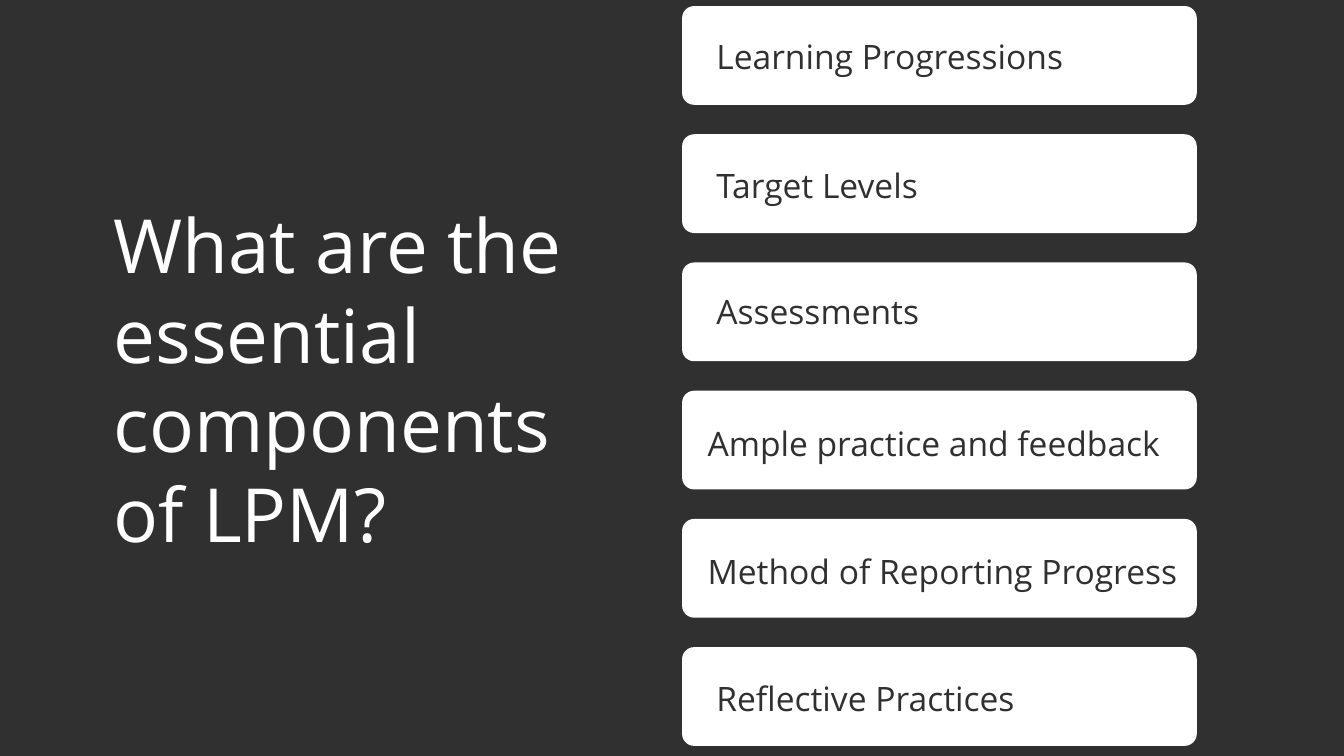
from dataclasses import dataclass

from pptx import Presentation
from pptx.dml.color import RGBColor
from pptx.enum.shapes import MSO_SHAPE
from pptx.enum.text import MSO_ANCHOR, PP_ALIGN
from pptx.util import Inches, Pt


@dataclass(frozen=True)
class Theme:
    dark: RGBColor = RGBColor(0x30, 0x30, 0x30)
    light: RGBColor = RGBColor(0xFF, 0xFF, 0xFF)
    font: str = "Open Sans"
    title_size: float = 80
    title_spacing: float = 96
    label_size: float = 36
    label_spacing: float = 46.8


class SlideBuilder:
    def __init__(self, slide, theme):
        self.slide = slide
        self.theme = theme

    def background(self):
        fill = self.slide.background.fill
        fill.solid()
        fill.fore_color.rgb = self.theme.dark

    def card(self, left, top, width, height, radius):
        shape = self.slide.shapes.add_shape(
            MSO_SHAPE.ROUNDED_RECTANGLE,
            Inches(left), Inches(top), Inches(width), Inches(height))
        shape.adjustments[0] = radius / height
        shape.shadow.inherit = False
        shape.fill.solid()
        shape.fill.fore_color.rgb = self.theme.light
        shape.line.fill.background()

    def text(self, content, left, top, width, height, size, spacing, color):
        box = self.slide.shapes.add_textbox(
            Inches(left), Inches(top), Inches(width), Inches(height))
        frame = box.text_frame
        frame.word_wrap = True
        frame.vertical_anchor = MSO_ANCHOR.TOP
        frame.margin_left = frame.margin_right = 0
        frame.margin_top = frame.margin_bottom = 0
        paragraph = frame.paragraphs[0]
        paragraph.alignment = PP_ALIGN.LEFT
        paragraph.line_spacing = Pt(spacing)
        run = paragraph.add_run()
        run.text = content
        run.font.name = self.theme.font
        run.font.size = Pt(size)
        run.font.color.rgb = color

    def title(self, content, left, top, width, height):
        self.text(content, left, top, width, height, self.theme.title_size,
                  self.theme.title_spacing, self.theme.light)

    def label(self, content, left, top, width):
        self.text(content, left, top, width, 0.63, self.theme.label_size,
                  self.theme.label_spacing, self.theme.dark)


# Card column geometry, in inches
CARD_LEFT, CARD_TOP = 10.15, 0.09
CARD_WIDTH, CARD_HEIGHT = 7.66, 1.47
CARD_RADIUS, CARD_STEP = 0.18, 1.908

# Label, then its offset from the card's left and top, and its width
COMPONENTS = [
    ("Learning Progressions", 0.51, 0.4, 6.54),
    ("Target Levels", 0.51, 0.4, 6.54),
    ("Assessments", 0.51, 0.38, 6.54),
    ("Ample practice and feedback", 0.38, 0.43, 6.89),
    ("Method of Reporting Progress", 0.38, 0.43, 7.14),
    ("Reflective Practices", 0.51, 0.41, 6.54),
]


def main():
    presentation = Presentation()
    presentation.slide_width = Inches(20)
    presentation.slide_height = Inches(11.25)
    slide = presentation.slides.add_slide(presentation.slide_layouts[6])
    builder = SlideBuilder(slide, Theme())

    # Background and question
    builder.background()
    builder.title("What are the essential components of LPM?",
                  1.69, 2.96, 7.31, 5.33)

    # Component cards
    for index, (content, indent, drop, width) in enumerate(COMPONENTS):
        top = CARD_TOP + index * CARD_STEP
        builder.card(CARD_LEFT, top, CARD_WIDTH, CARD_HEIGHT, CARD_RADIUS)
        builder.label(content, CARD_LEFT + indent, top + drop, width)

    presentation.save("out.pptx")


if __name__ == "__main__":
    main()
